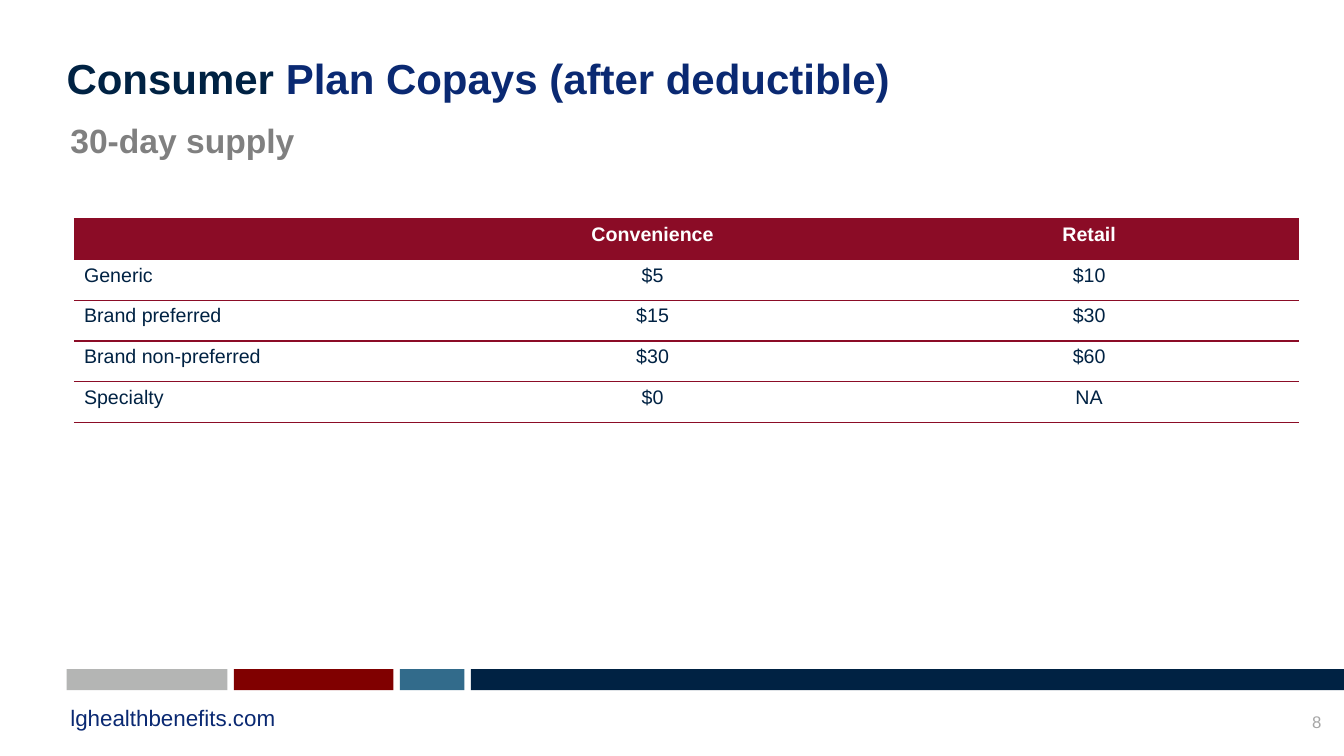
from dataclasses import dataclass

from lxml import etree
from pptx import Presentation
from pptx.dml.color import RGBColor
from pptx.enum.shapes import MSO_SHAPE
from pptx.enum.text import MSO_ANCHOR, MSO_AUTO_SIZE, PP_ALIGN
from pptx.oxml.ns import qn
from pptx.util import Pt

RECTANGLE = MSO_SHAPE.RECTANGLE
BOTTOM = MSO_ANCHOR.BOTTOM
NO_FIT = MSO_AUTO_SIZE.NONE
LEFT, CENTER, RIGHT = PP_ALIGN.LEFT, PP_ALIGN.CENTER, PP_ALIGN.RIGHT


@dataclass(frozen=True)
class Theme:
    """Colours, font and type sizes of the deck."""
    font: str = "Arial"
    navy: str = "002243"
    blue: str = "0A2972"
    crimson: str = "8B0C26"
    maroon: str = "800000"
    teal: str = "326B8B"
    silver: str = "B4B5B4"
    gray: str = "808080"
    pale: str = "A6A6A6"
    white: str = "FFFFFF"
    title: int = 30
    subtitle: int = 24
    site: int = 16
    cell: int = 14
    number: int = 12


THEME = Theme()
PAGE_WIDTH, PAGE_HEIGHT = 960, 540
COPAYS = [
    ("", "Convenience", "Retail"),
    ("Generic", "$5", "$10"),
    ("Brand preferred", "$15", "$30"),
    ("Brand non-preferred", "$30", "$60"),
    ("Specialty", "$0", "NA"),
]
COLUMN_SHARES = (3.49, 4.5, 4.16)
BARS = [(115, THEME.silver), (114, THEME.maroon), (46, THEME.teal)]
BAR_GAP = 4.6


def add_span(para, text, size, color, bold=False):
    """Add one formatted run to a paragraph."""
    span = para.add_run()
    span.text = text
    formats = {"name": THEME.font, "size": Pt(size), "bold": bold}
    for name, value in formats.items():
        setattr(span.font, name, value)
    span.font.color.rgb = RGBColor.from_string(color)


def fill_frame(frame, spans, size, align=LEFT, bold=False):
    """Set a bottom-anchored line of coloured spans without margins."""
    formats = {"margin_left": 0, "margin_right": 0, "margin_top": 0, "margin_bottom": 0,
               "word_wrap": True, "auto_size": NO_FIT, "vertical_anchor": BOTTOM}
    for name, value in formats.items():
        setattr(frame, name, value)
    para = frame.paragraphs[0]
    para.alignment = align
    for text, color in spans:
        add_span(para, text, size, color, bold)


def add_line(page, box, text, color, size, **formats):
    """Place a one-line text box."""
    shape = page.shapes.add_textbox(*map(Pt, box))
    fill_frame(shape.text_frame, [(text, color)], size, **formats)


def add_heading(page, box):
    """Place the title at the top of the box and the subtitle at its foot."""
    left, top, width, height = box
    title = page.shapes.title
    place = {"left": left, "top": top, "width": width, "height": 36}
    for name, value in place.items():
        setattr(title, name, Pt(value))
    spans = [("Consumer ", THEME.navy), ("Plan Copays (after deductible)", THEME.blue)]
    fill_frame(title.text_frame, spans, THEME.title, bold=True)
    subtitle_box = (left + 2.8, top + height - 29, width - 5.6, 29)
    add_line(page, subtitle_box, "30-day supply", THEME.gray, THEME.subtitle, bold=True)


def set_borders(cell):
    """Rule a cell above and below and leave its sides open."""
    properties = cell._tc.get_or_add_tcPr()
    for edge in ("lnL", "lnR", "lnT", "lnB"):
        line = etree.SubElement(properties, qn(f"a:{edge}"), w=str(Pt(1)))
        if edge in ("lnL", "lnR"):
            etree.SubElement(line, qn("a:noFill"))
        else:
            solid = etree.SubElement(line, qn("a:solidFill"))
            etree.SubElement(solid, qn("a:srgbClr"), val=THEME.crimson)


def add_copays(page, box):
    """Place the copay table with equal rows."""
    table = page.shapes.add_table(len(COPAYS), len(COLUMN_SHARES), *map(Pt, box)).table
    table.horz_banding = False
    for column, share in zip(table.columns, COLUMN_SHARES):
        column.width = Pt(box[2] * share / sum(COLUMN_SHARES))
    for row_index, row in enumerate(COPAYS):
        header = row_index == 0
        for column_index, text in enumerate(row):
            cell = table.cell(row_index, column_index)
            set_borders(cell)
            cell.fill.solid()
            cell.fill.fore_color.rgb = RGBColor.from_string(THEME.crimson if header else THEME.white)
            para = cell.text_frame.paragraphs[0]
            para.alignment = CENTER if column_index else LEFT
            para.font.size = Pt(THEME.cell)
            if text:
                add_span(para, text, THEME.cell, THEME.white if header else THEME.navy, header)


def add_footer(page, box):
    """Place the colour bars with the site address and page number below."""
    left, top, width, height = box
    right = left + width
    bar_left = left
    for bar_width, color in BARS + [(None, THEME.navy)]:
        bar_width = bar_width or right - bar_left
        bar = page.shapes.add_shape(RECTANGLE, Pt(bar_left), Pt(top), Pt(bar_width), Pt(15))
        bar.shadow.inherit = False
        bar.fill.solid()
        bar.fill.fore_color.rgb = RGBColor.from_string(color)
        bar.line.fill.background()
        bar_left += bar_width + BAR_GAP
    bottom = top + height
    add_line(page, (left + 2.8, bottom - 19.5, 294, 19.5), "lghealthbenefits.com",
             THEME.blue, THEME.site)
    add_line(page, (right - 40.5, bottom - 14.4, 24.5, 14.4), "8", THEME.pale, THEME.number,
             align=RIGHT)


def build_copay_slide(deck):
    """Add the copay slide to the deck."""
    page = deck.slides.add_slide(deck.slide_layouts[5])
    for holder in list(page.placeholders):
        if holder != page.shapes.title:
            holder._element.getparent().remove(holder._element)
    add_heading(page, (47.5, 37.5, 872, 77))
    add_copays(page, (52.8, 156, 875, 146))
    add_footer(page, (47.5, 478, PAGE_WIDTH - 47.5, 44.5))


def main():
    """Build and save the deck."""
    deck = Presentation()
    deck.slide_width, deck.slide_height = Pt(PAGE_WIDTH), Pt(PAGE_HEIGHT)
    build_copay_slide(deck)
    deck.save("out.pptx")


if __name__ == "__main__":
    main()
